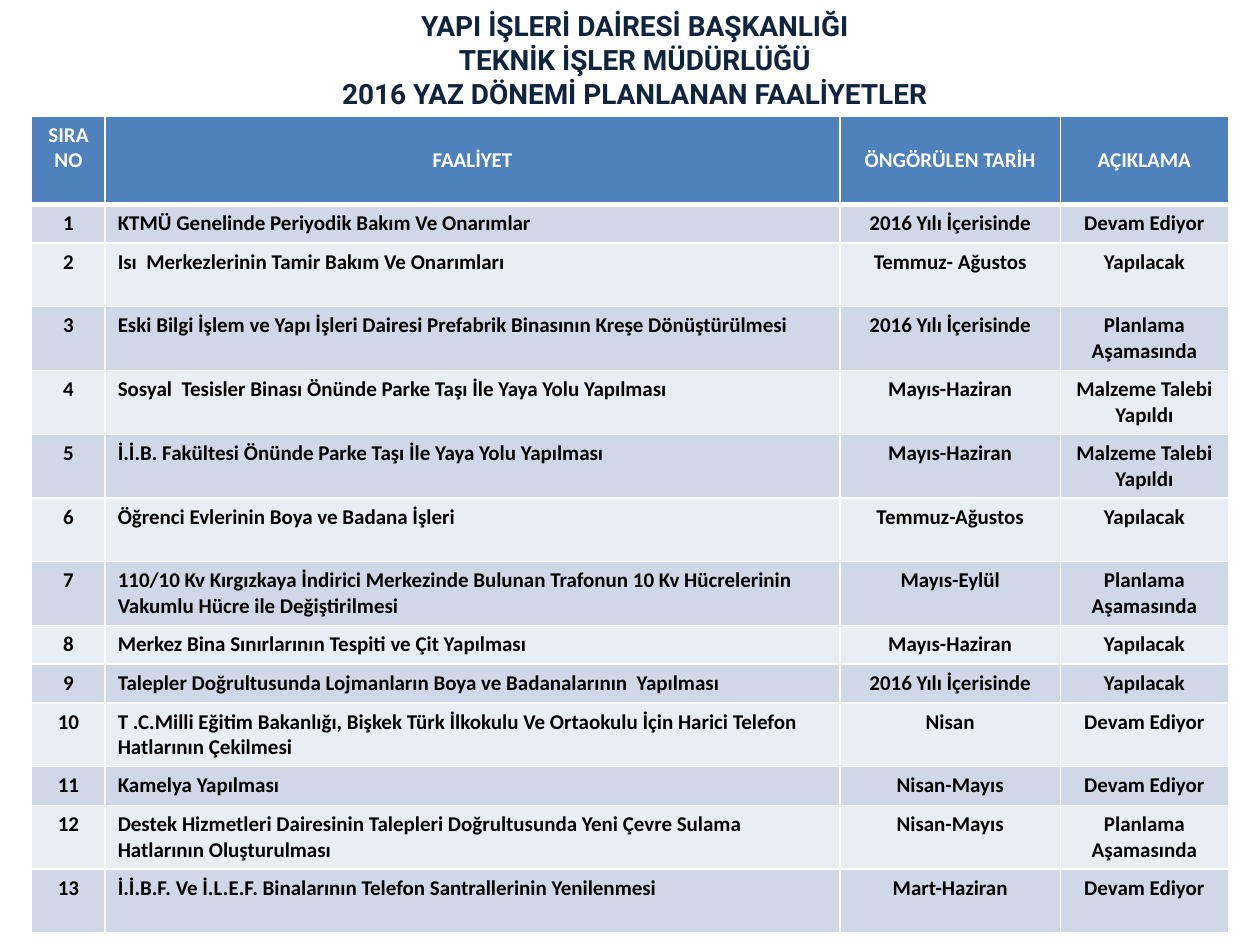
from dataclasses import dataclass

from lxml import etree
from pptx import Presentation
from pptx.dml.color import RGBColor
from pptx.enum.text import MSO_ANCHOR, MSO_AUTO_SIZE, PP_ALIGN
from pptx.oxml.ns import qn
from pptx.util import Cm, Pt

LEFT, CENTER = PP_ALIGN.LEFT, PP_ALIGN.CENTER
TOP, MIDDLE, BOTTOM = MSO_ANCHOR.TOP, MSO_ANCHOR.MIDDLE, MSO_ANCHOR.BOTTOM
NO_FIT = MSO_AUTO_SIZE.NONE


@dataclass(frozen=True)
class Theme:
    """Fonts, type sizes and colours of the slide."""
    title_font: str = "Roboto"
    font: str = "Calibri"
    title_size: int = 16
    size: int = 12
    navy: str = "0F243E"
    blue: str = "4F81BD"
    bands: tuple = ("E9EDF4", "D0D8E8")
    white: str = "FFFFFF"
    black: str = "000000"


THEME = Theme()
TITLE = ("YAPI İŞLERİ DAİRESİ BAŞKANLIĞI", "TEKNİK İŞLER MÜDÜRLÜĞÜ",
         "2016 YAZ DÖNEMİ PLANLANAN FAALİYETLER")
HEADS = ("SIRA NO", "FAALİYET", "ÖNGÖRÜLEN TARİH", "AÇIKLAMA")
WIDTHS = (1.48, 14.81, 4.45, 3.38)
HEAD_ROW, LOW_ROW, HIGH_ROW = 1.78, 0.78, 1.28
LOW = (1, 8, 9, 11)
TASKS = (
    ("KTMÜ Genelinde Periyodik Bakım Ve Onarımlar",
     "2016 Yılı İçerisinde", "Devam Ediyor"),
    ("Isı  Merkezlerinin Tamir Bakım Ve Onarımları",
     "Temmuz- Ağustos", "Yapılacak"),
    ("Eski Bilgi İşlem ve Yapı İşleri Dairesi Prefabrik Binasının Kreşe Dönüştürülmesi",
     "2016 Yılı İçerisinde", "Planlama Aşamasında"),
    ("Sosyal  Tesisler Binası Önünde Parke Taşı İle Yaya Yolu Yapılması",
     "Mayıs-Haziran", "Malzeme Talebi Yapıldı"),
    ("İ.İ.B. Fakültesi Önünde Parke Taşı İle Yaya Yolu Yapılması",
     "Mayıs-Haziran", "Malzeme Talebi Yapıldı"),
    ("Öğrenci Evlerinin Boya ve Badana İşleri",
     "Temmuz-Ağustos", "Yapılacak"),
    ("110/10 Kv Kırgızkaya İndirici Merkezinde Bulunan Trafonun 10 Kv Hücrelerinin "
     "Vakumlu Hücre ile Değiştirilmesi",
     "Mayıs-Eylül", "Planlama Aşamasında"),
    ("Merkez Bina Sınırlarının Tespiti ve Çit Yapılması",
     "Mayıs-Haziran", "Yapılacak"),
    ("Talepler Doğrultusunda Lojmanların Boya ve Badanalarının  Yapılması",
     "2016 Yılı İçerisinde", "Yapılacak"),
    ("T .C.Milli Eğitim Bakanlığı, Bişkek Türk İlkokulu Ve Ortaokulu İçin Harici Telefon "
     "Hatlarının Çekilmesi",
     "Nisan", "Devam Ediyor"),
    ("Kamelya Yapılması", "Nisan-Mayıs", "Devam Ediyor"),
    ("Destek Hizmetleri Dairesinin Talepleri Doğrultusunda Yeni Çevre Sulama "
     "Hatlarının Oluşturulması",
     "Nisan-Mayıs", "Planlama Aşamasında"),
    ("İ.İ.B.F. Ve İ.L.E.F. Binalarının Telefon Santrallerinin Yenilenmesi",
     "Mart-Haziran", "Devam Ediyor"),
)


def set_text(frame, text, face, size, color, align):
    """Write one bold paragraph into a text frame."""
    frame.text = text
    par = frame.paragraphs[0]
    par.alignment = align
    font = par.font
    font.name, font.size, font.bold = face, Pt(size), True
    font.color.rgb = RGBColor.from_string(color)


def set_edges(cell, base):
    """Draw white borders round a cell, with the given width below."""
    props = cell._tc.get_or_add_tcPr()
    for spot, (side, width) in enumerate(
            (("lnL", 1), ("lnR", 1), ("lnT", 1), ("lnB", base))):
        line = etree.Element(qn(f"a:{side}"), w=str(Pt(width)))
        fill = etree.SubElement(line, qn("a:solidFill"))
        etree.SubElement(fill, qn("a:srgbClr"), val=THEME.white)
        props.insert(spot, line)


def set_cell(cell, text, fill, color, align, anchor=TOP, base=1):
    """Fill, border and label one table cell."""
    cell.fill.solid()
    cell.fill.fore_color.rgb = RGBColor.from_string(fill)
    cell.vertical_anchor = anchor
    set_text(cell.text_frame, text, THEME.font, THEME.size, color, align)
    set_edges(cell, base)


def add_title(slide):
    """Place and format the title."""
    title = slide.shapes.title
    title.left, title.top = Cm(1.27), Cm(0.1)
    title.width, title.height = Cm(23.06), Cm(2.24)
    frame = title.text_frame
    frame.auto_size = NO_FIT
    frame.vertical_anchor = BOTTOM
    set_text(frame, "\v".join(TITLE), THEME.title_font, THEME.title_size,
             THEME.navy, CENTER)


def add_plan(slide):
    """Build the table of planned tasks."""
    highs = [HEAD_ROW] + [LOW_ROW if num in LOW else HIGH_ROW
                          for num in range(1, len(TASKS) + 1)]
    table = slide.shapes.add_table(
        len(highs), len(WIDTHS), Cm(0.64), Cm(2.34),
        Cm(sum(WIDTHS)), Cm(sum(highs))).table
    for col, width in zip(table.columns, WIDTHS):
        col.width = Cm(width)
    for row, high in zip(table.rows, highs):
        row.height = Cm(high)
    for col, head in enumerate(HEADS):
        set_cell(table.cell(0, col), head, THEME.blue, THEME.white, CENTER,
                 MIDDLE if col else TOP, 3)
    for num, task in enumerate(TASKS, 1):
        for col, text in enumerate((str(num), *task)):
            set_cell(table.cell(num, col), text, THEME.bands[num % 2],
                     THEME.black, LEFT if col == 1 else CENTER)


def main():
    """Make the slide and save it."""
    deck = Presentation()
    deck.slide_width, deck.slide_height = Cm(25.4), Cm(19.05)
    slide = deck.slides.add_slide(deck.slide_layouts[5])
    add_title(slide)
    add_plan(slide)
    deck.save("out.pptx")


if __name__ == "__main__":
    main()
